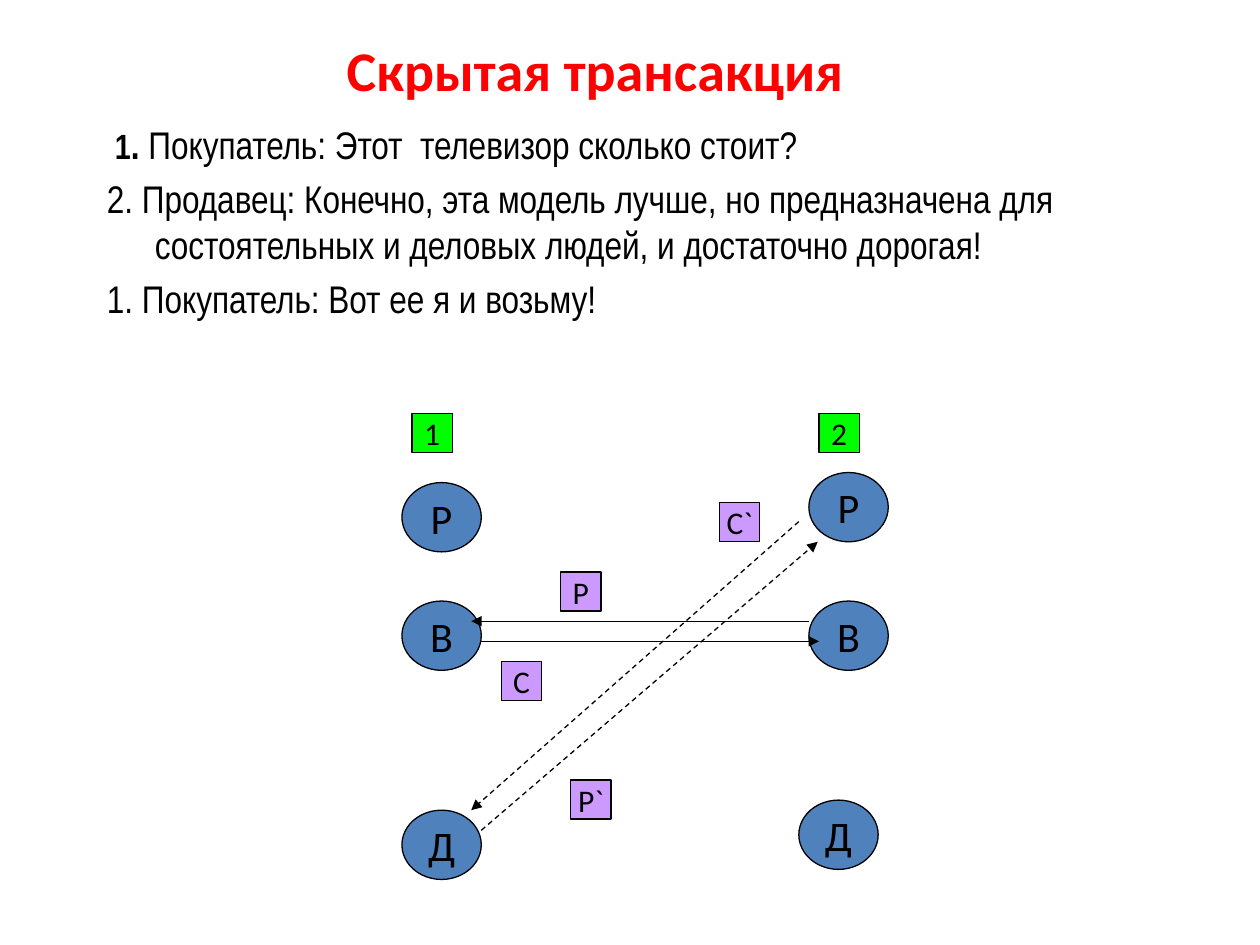
from lxml import etree
from pptx import Presentation
from pptx.dml.color import RGBColor
from pptx.enum.dml import MSO_LINE
from pptx.enum.shapes import MSO_CONNECTOR, MSO_SHAPE
from pptx.enum.text import MSO_ANCHOR, PP_ALIGN
from pptx.oxml.ns import qn
from pptx.util import Inches, Pt

BLACK = RGBColor(0x00, 0x00, 0x00)
RED = RGBColor(0xFF, 0x00, 0x00)
GREEN = RGBColor(0x00, 0xFF, 0x00)
BLUE = RGBColor(0x4F, 0x81, 0xBD)
LILAC = RGBColor(0xCC, 0x99, 0xFF)
RECT, OVAL = MSO_SHAPE.RECTANGLE, MSO_SHAPE.OVAL
STRAIGHT, DASH = MSO_CONNECTOR.STRAIGHT, MSO_LINE.DASH
CENTER, MIDDLE = PP_ALIGN.CENTER, MSO_ANCHOR.MIDDLE


def add_run(para, text, size, font="Calibri", color=BLACK, bold=False):
    run = para.add_run()
    run.text = text
    run.font.size = Pt(size)
    run.font.name = font
    run.font.color.rgb = color
    run.font.bold = bold


def add_node(kind, left, top, width, height, text, size, fill):
    """Add an outlined shape with a centred label."""
    node = slide.shapes.add_shape(
        kind, Inches(left), Inches(top), Inches(width), Inches(height))
    node.shadow.inherit = False
    node.fill.solid()
    node.fill.fore_color.rgb = fill
    node.line.color.rgb = BLACK
    node.line.width = Pt(0.75)
    frame = node.text_frame
    frame.word_wrap = False
    frame.vertical_anchor = MIDDLE
    para = frame.paragraphs[0]
    para.alignment = CENTER
    add_run(para, text, size)


prs = Presentation()
prs.slide_width, prs.slide_height = Inches(10), Inches(7.5)
slide = prs.slides.add_slide(prs.slide_layouts[6])

# Dialogue
body = slide.shapes.add_textbox(
    Inches(0.75), Inches(0.91), Inches(8.42), Inches(5.83)).text_frame
body.word_wrap = True
dialogue = [
    [(" ", 20, False), ("1", 20, True), (".", 22, True),
     (" Покупатель: Этот  телевизор сколько стоит?", 22, False)],
    [("2. Продавец: Конечно, эта модель лучше, но предназначена для "
      "состоятельных и деловых людей, и достаточно дорогая!", 22, False)],
    [("1. Покупатель: Вот ее я и возьму!", 22, False)],
]
for i, runs in enumerate(dialogue):
    para = body.add_paragraph() if i else body.paragraphs[0]
    para.space_before = Pt(4.4)
    props = para._p.get_or_add_pPr()
    props.set("marL", str(Inches(0.38)))
    props.set("indent", str(-Inches(0.38)))
    for text, size, bold in runs:
        add_run(para, text, size, "Arial Narrow", bold=bold)

# Title
title = slide.shapes.add_textbox(
    Inches(0.75), Inches(0.17), Inches(7.95), Inches(0.75)).text_frame
title.word_wrap = True
title.vertical_anchor = MIDDLE
title.paragraphs[0].alignment = CENTER
add_run(title.paragraphs[0], "Скрытая трансакция", 32, color=RED, bold=True)

# People and their ego states
for left, text in [(3.27, "1"), (6.5, "2")]:
    add_node(RECT, left, 3.28, 0.32, 0.31, text, 18, GREEN)
states = [
    (3.19, 3.83, "Р"), (6.42, 3.75, "Р"),
    (3.19, 4.77, "В"), (6.42, 4.77, "В"),
    (3.19, 6.43, "Д"), (6.34, 6.35, "Д"),
]
for left, top, text in states:
    add_node(OVAL, left, top, 0.63, 0.55, text, 24, BLUE)

# Open transactions are solid, hidden ones dashed
arrows = [
    (3.82, 5.09, 6.5, 5.09, False),
    (6.42, 4.93, 3.74, 4.93, False),
    (6.34, 4.14, 3.74, 6.43, True),
    (3.82, 6.59, 6.49, 4.3, True),
]
for x1, y1, x2, y2, hidden in arrows:
    arrow = slide.shapes.add_connector(
        STRAIGHT, Inches(x1), Inches(y1), Inches(x2), Inches(y2))
    arrow.line.color.rgb = BLACK
    arrow.line.width = Pt(0.75)
    if hidden:
        arrow.line.dash_style = DASH
    etree.SubElement(arrow.line._get_or_add_ln(), qn("a:tailEnd"),
                     type="triangle")
    etree.SubElement(arrow._element.spPr, qn("a:effectLst"))

# Stimulus and response labels
labels = [(3.98, 5.25, "С"), (4.45, 4.54, "Р"),
          (4.53, 6.19, "Р`"), (5.71, 3.99, "C`")]
for left, top, text in labels:
    add_node(RECT, left, top, 0.32, 0.31, text, 18, LILAC)

prs.save("out.pptx")
